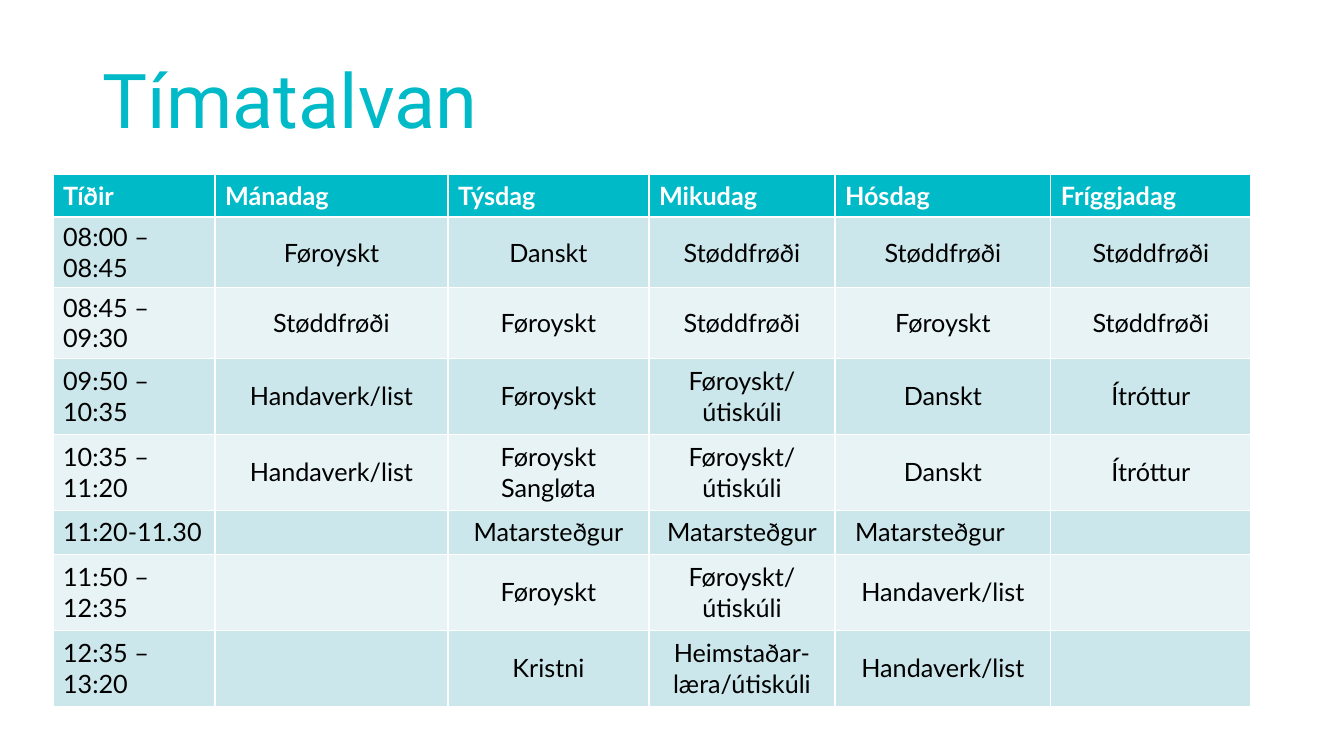
from pptx import Presentation
from pptx.dml.color import RGBColor
from pptx.enum.text import MSO_ANCHOR as Anchor, PP_ALIGN as Align
from pptx.util import Pt

# Content
TITLE = "Tímatalvan"
DAYS = ["Tíðir", "Mánadag", "Týsdag", "Mikudag", "Hósdag", "Fríggjadag"]
HOURS = [
    ["08:00 – 08:45", "Føroyskt", "Danskt", "Støddfrøði", "Støddfrøði", "Støddfrøði"],
    ["08:45 – 09:30", "Støddfrøði", "Føroyskt", "Støddfrøði", "Føroyskt", "Støddfrøði"],
    ["09:50 – 10:35", "Handaverk/list", "Føroyskt", "Føroyskt/ útiskúli", "Danskt", "Ítróttur"],
    ["10:35 – 11:20", "Handaverk/list", "Føroyskt\nSangløta", "Føroyskt/ útiskúli", "Danskt", "Ítróttur"],
    ["11:20-11.30", "", "Matarsteðgur", "Matarsteðgur", "Matarsteðgur", ""],
    ["11:50 – 12:35", "", "Føroyskt", "Føroyskt/ útiskúli", "Handaverk/list", ""],
    ["12:35 –13:20", "", "Kristni", "Heimstaðar-læra/útiskúli", "Handaverk/list", ""],
]

# Sizes in px
SLIDE = (1344, 756)
HEAD = (93, 40, 1160, 110)
LEFT, TOP = 53, 174
COLS = [162, 233, 201, 186, 216, 200]
ROWS = [43, 70, 70, 76, 76, 44, 76, 76]
SHIFTED, SHIFT = (5, 4), 36  # row and column of the cell set to the left, its right margin

TEAL, WHITE, BLACK = "00BAC8", "FFFFFF", "000000"
BANDS = ["CCE7EB", "E7F3F5"]


def px(n):
    return round(n * 12192000 / 1344)


def color(code):
    return RGBColor.from_string(code)


def style(frame, font, size, code, bold=False, align=Align.LEFT):
    for para in frame.paragraphs:
        para.alignment = align
        para.font.size = Pt(size)
        for run in para.runs:
            run.font.name = font
            run.font.size = Pt(size)
            run.font.bold = bold
            run.font.color.rgb = color(code)


deck = Presentation()
deck.slide_width, deck.slide_height = map(px, SLIDE)
slide = deck.slides.add_slide(deck.slide_layouts[6])

# Title
frame = slide.shapes.add_textbox(*map(px, HEAD)).text_frame
frame.word_wrap = True
frame.vertical_anchor = Anchor.BOTTOM
frame.text = TITLE
frame.paragraphs[0].line_spacing = 0.9
style(frame, "Roboto", 54, TEAL)

# Timetable
grid = [DAYS] + HOURS
box = map(px, (LEFT, TOP, sum(COLS), sum(ROWS)))
table = slide.shapes.add_table(len(ROWS), len(COLS), *box).table
for col, width in zip(table.columns, COLS):
    col.width = px(width)
for row, height in zip(table.rows, ROWS):
    row.height = px(height)

for r, line in enumerate(grid):
    top = r == 0
    for c, text in enumerate(line):
        cell = table.cell(r, c)
        cell.vertical_anchor = Anchor.MIDDLE
        cell.fill.solid()
        cell.fill.fore_color.rgb = color(TEAL if top else BANDS[(r - 1) % 2])
        if (r, c) == SHIFTED:
            cell.margin_right = px(SHIFT)
        cell.text_frame.text = text
        align = Align.LEFT if top or c == 0 else Align.CENTER
        style(cell.text_frame, "Lato", 18, WHITE if top else BLACK, top, align)

deck.save("out.pptx")
